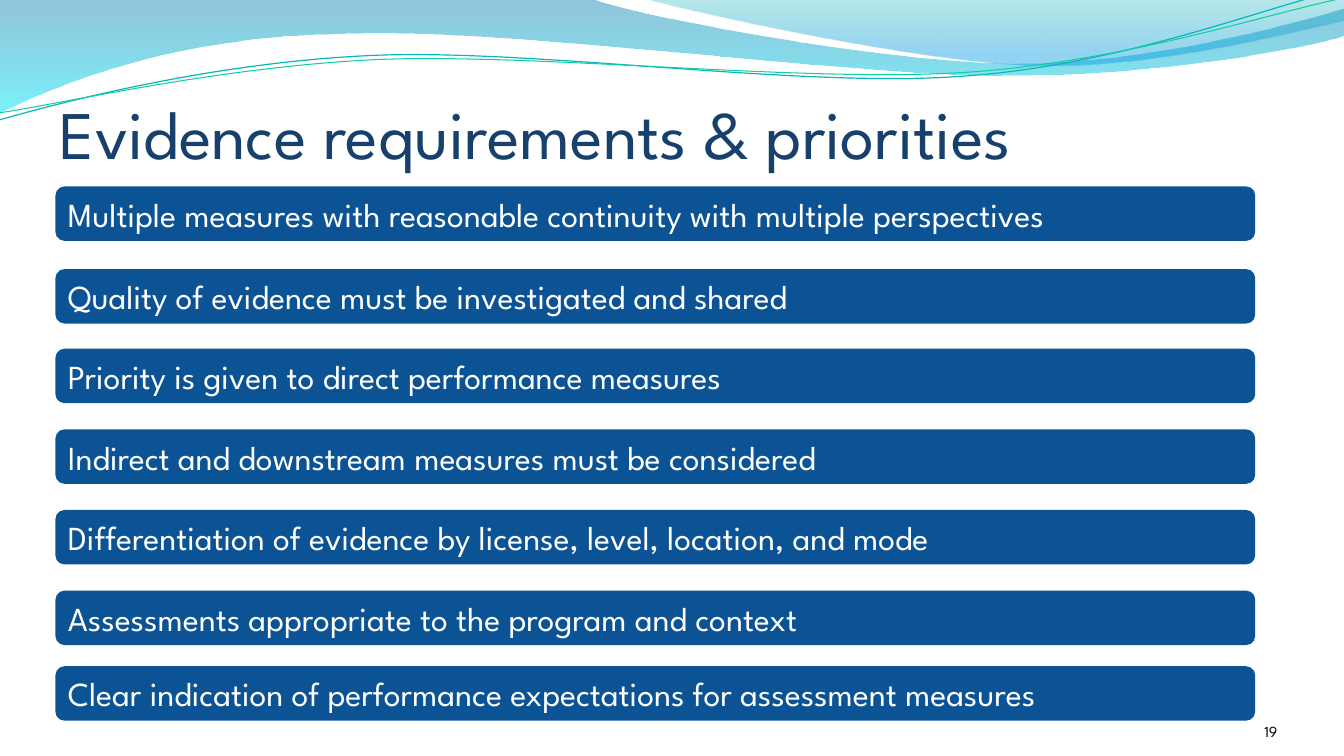
from dataclasses import dataclass

from lxml import etree
from pptx import Presentation, util as u
from pptx.dml.color import RGBColor
from pptx.enum import shapes, text
from pptx.oxml.ns import qn

PX = 9144  # EMU per px, 100 px to the inch


@dataclass(frozen=True)
class Theme:
    font: str = "League Spartan"
    title_size: float = 48.6
    bar_size: float = 24
    number_size: float = 11
    title: str = "17406D"
    bar: str = "0B5394"
    bar_text: str = "FFFFFF"
    number: str = "000000"
    teal_line: str = "09B6BE"
    green_line: str = "10CF9B"
    # Gradient stops: position, colour, opacity (positions and opacity in percent)
    left_wave: tuple = ((0, "0079AD", 43), (100, "00E9F7", 53))
    right_wave: tuple = ((0, "00ABB4", 28), (80, "0099E4", 43), (100, "0099E4", 43))


THEME = Theme()

# Each step is one end point, or two control points and an end point
LEFT_WAVE = [
    [(0, 0)], [(587, -1)],
    [(634, 17), (884, 63), (1011, 63)], [(1137, 63), (1277, 26), (1333, 9)],
    [(1334, 36)],
    [(1311, 44), (1159, 76), (994, 75)], [(829, 75), (509, 28), (343, 34)],
    [(172, 36), (61, 83), (-2, 113)],
]
RIGHT_WAVE = [
    [(638, -1)],
    [(679, 11), (909, 62), (1025, 65)], [(1140, 69), (1282, 32), (1333, 21)],
    [(1333, 0)],
]
TEAL_CURVE = [
    [(-1, 119)],
    [(63, 101), (210, 62), (369, 55)], [(527, 48), (789, 87), (949, 76)],
    [(1110, 66), (1251, 8), (1330, -10)],
]
GREEN_CURVE = [
    [(-1, 112)],
    [(62, 103), (218, 66), (377, 59)], [(537, 53), (796, 82), (955, 72)],
    [(1114, 62), (1255, 14), (1333, -2)],
]

# Top edge of each bar and its wording
REQUIREMENTS = [
    (185, "Multiple measures with reasonable continuity with multiple perspectives"),
    (267, "Quality of evidence must be investigated and shared"),
    (346, "Priority is given to direct performance measures"),
    (426, "Indirect and downstream measures must be considered"),
    (506, "Differentiation of evidence by license, level, location, and mode"),
    (586, "Assessments appropriate to the program and context"),
    (661, "Clear indication of performance expectations for assessment measures"),
]


def emu(*lengths):
    return [length * PX for length in lengths]


def add_outline(slide, steps, close):
    """Draw the steps as lines, then join each group of three into a Bezier."""
    points = [emu(*point) for step in steps for point in step]
    builder = slide.shapes.build_freeform(*points[0], scale=1.0)
    builder.add_line_segments(points[1:], close=close)
    outline = builder.convert_to_shape()
    outline.shadow.inherit = False

    segments = iter(list(outline._element.spPr.iter(qn("a:lnTo"))))
    for step in steps[1:]:
        group = [next(segments) for _ in step]
        if len(group) == 3:
            bezier = etree.Element(qn("a:cubicBezTo"))
            group[0].addprevious(bezier)
            for segment in group:
                bezier.append(segment[0])
                segment.getparent().remove(segment)
    return outline


def add_wave(slide, steps, stops):
    wave = add_outline(slide, steps, close=True)
    wave.line.fill.background()
    wave.fill.gradient()
    wave.fill.gradient_angle = 270
    stop_list = wave._element.spPr.find(".//" + qn("a:gsLst"))
    for stop in list(stop_list):
        stop_list.remove(stop)
    for position, color, opacity in stops:
        stop = etree.SubElement(stop_list, qn("a:gs"), pos=str(position * 1000))
        rgb = etree.SubElement(stop, qn("a:srgbClr"), val=color)
        etree.SubElement(rgb, qn("a:alpha"), val=str(opacity * 1000))


def add_curve(slide, steps, color, width):
    curve = add_outline(slide, steps, close=False)
    curve.fill.background()
    curve.line.color.rgb = RGBColor.from_string(color)
    curve.line.width = u.Pt(width)


def write(shape, wording, size, color, align, anchor, insets):
    frame = shape.text_frame
    frame.word_wrap = True
    frame.auto_size = text.MSO_AUTO_SIZE.NONE
    frame.vertical_anchor = anchor
    (frame.margin_left, frame.margin_top,
     frame.margin_right, frame.margin_bottom) = emu(*insets)
    paragraph = frame.paragraphs[0]
    paragraph.text = wording
    paragraph.alignment = align
    paragraph.font.name = THEME.font
    paragraph.font.size = u.Pt(size)
    paragraph.font.color.rgb = RGBColor.from_string(color)


def place_title(slide, wording):
    title = slide.shapes.title
    title.left, title.top, title.width, title.height = emu(59, 47, 1211, 125)
    write(title, wording, THEME.title_size, THEME.title,
          text.PP_ALIGN.LEFT, text.MSO_ANCHOR.BOTTOM, (0, 5, 0, 0))
    # Bring the title in front of the waves
    slide.shapes._spTree.append(title._element)


def add_page_number(slide, number):
    box = slide.shapes.add_textbox(*emu(1156, 695, 111, 40))
    write(box, number, THEME.number_size, THEME.number,
          text.PP_ALIGN.RIGHT, text.MSO_ANCHOR.BOTTOM, (0, 0, 0, 0))


def add_bar(slide, top, wording):
    bar = slide.shapes.add_shape(
        shapes.MSO_SHAPE.ROUNDED_RECTANGLE, *emu(55, top, 1190, 54))
    bar.shadow.inherit = False
    bar.fill.solid()
    bar.fill.fore_color.rgb = RGBColor.from_string(THEME.bar)
    bar.line.fill.background()
    write(bar, wording, THEME.bar_size, THEME.bar_text,
          text.PP_ALIGN.LEFT, text.MSO_ANCHOR.MIDDLE, (10, 5, 10, 5))


def main():
    deck = Presentation()
    deck.slide_width, deck.slide_height = emu(1333, 750)
    slide = deck.slides.add_slide(deck.slide_layouts[5])

    # Wave decoration along the top
    add_wave(slide, LEFT_WAVE, THEME.left_wave)
    add_wave(slide, RIGHT_WAVE, THEME.right_wave)
    add_curve(slide, TEAL_CURVE, THEME.teal_line, 0.85)
    add_curve(slide, GREEN_CURVE, THEME.green_line, 0.75)

    # Title and page number
    place_title(slide, "Evidence requirements & priorities")
    add_page_number(slide, "19")

    # Requirement bars
    for top, wording in REQUIREMENTS:
        add_bar(slide, top, wording)

    deck.save("out.pptx")


if __name__ == "__main__":
    main()
